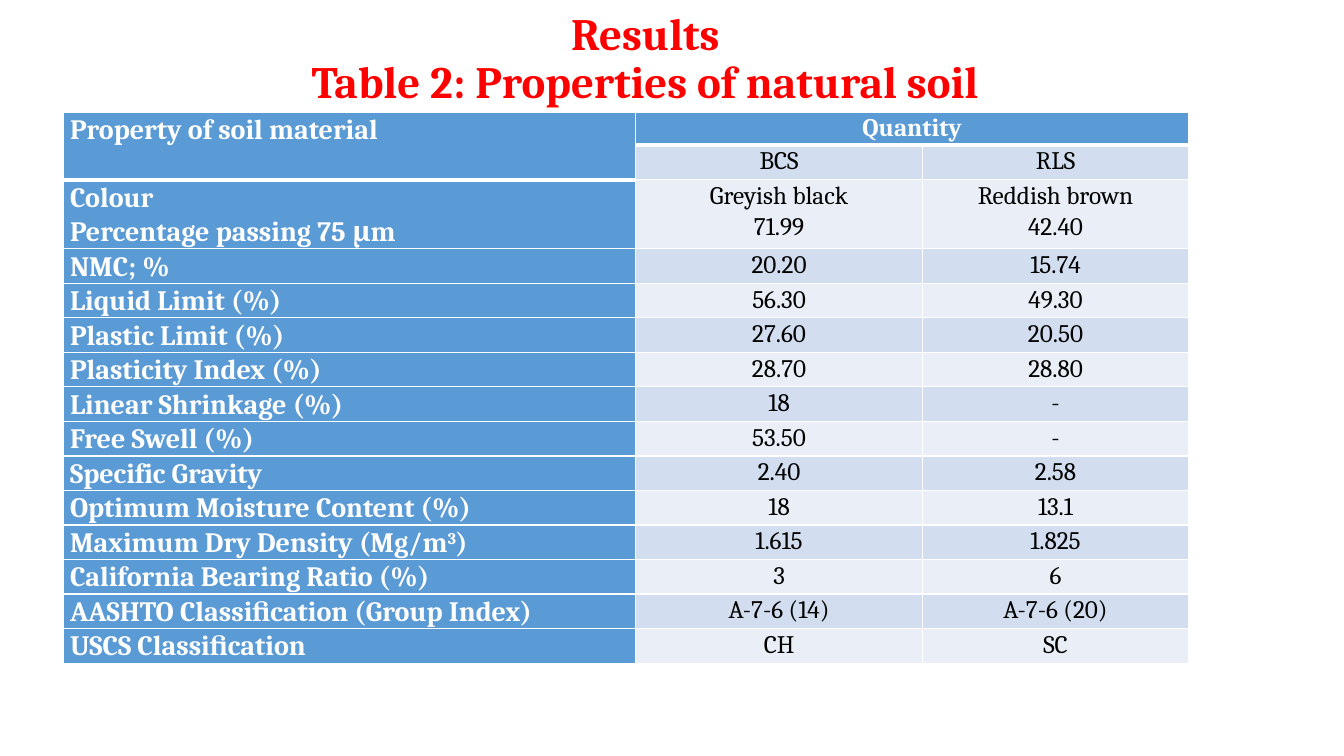
"""Build a slide with a table of natural soil properties."""
import pptx
import pptx.dml.color
import pptx.enum.text
import pptx.oxml
import pptx.oxml.ns
import pptx.util

Pt = pptx.util.Pt
ALIGN = pptx.enum.text.PP_ALIGN
ANCHOR = pptx.enum.text.MSO_ANCHOR
HUES = {"title": "FF0000", "head": "5B9BD5", "dark": "D2DEEF",
        "light": "EAEFF7", "white": "FFFFFF", "black": "000000"}
WIDTHS = (409, 205, 190)
ROW = 23.76
ROWS = (
    ("Property of soil material", "Quantity", ""),
    ("", "BCS", "RLS"),
    ("Colour\nPercentage passing 75 μm", "Greyish black\n71.99", "Reddish brown\n42.40"),
    ("NMC; %", "20.20", "15.74"),
    ("Liquid Limit (%)", "56.30", "49.30"),
    ("Plastic Limit (%)", "27.60", "20.50"),
    ("Plasticity Index (%)", "28.70", "28.80"),
    ("Linear Shrinkage (%)", "18", "-"),
    ("Free Swell (%)", "53.50", "-"),
    ("Specific Gravity", "2.40", "2.58"),
    ("Optimum Moisture Content (%)", "18", "13.1"),
    ("Maximum Dry Density (Mg/m^3^)", "1.615", "1.825"),
    ("California Bearing Ratio (%)", "3", "6"),
    ("AASHTO Classiﬁcation (Group Index)", "A-7-6 (14)", "A-7-6 (20)"),
    ("USCS Classiﬁcation", "CH", "SC"),
)


def tint(name):
    """Return the named colour."""
    return pptx.dml.color.RGBColor.from_string(HUES[name])


def write(frame, text, size=18, hue="black", bold=False, align=ALIGN.CENTER,
          lead=1.07, font="Cambria"):
    """Fill a frame: newline parts paragraphs, \\v parts lines, ^ wraps superscript."""
    for n, line in enumerate(text.split("\n")):
        para = frame.add_paragraph() if n else frame.paragraphs[0]
        para.alignment, para.line_spacing = align, lead
        para.space_before = para.space_after = Pt(0)
        for k, part in enumerate(line.split("\v")):
            if k:
                para.add_line_break()
            for i, piece in enumerate(part.split("^")):
                run = para.add_run()
                run.text = piece
                run.font.name, run.font.size, run.font.bold = font, Pt(size), bold
                run.font.color.rgb = tint(hue)
                if i % 2:
                    run.font._element.set("baseline", "30000")


class Deck:
    """Hold the style and the current slide."""

    def __init__(self, wide, high):
        """Open a deck with one title-only slide."""
        self.file = pptx.Presentation()
        self.file.slide_width, self.file.slide_height = Pt(wide), Pt(high)
        self.slide = self.file.slides.add_slide(self.file.slide_layouts[5])

    def title(self, text, x, y, w, h):
        """Place and format the title."""
        box = self.slide.shapes.title
        box.left, box.top, box.width, box.height = Pt(x), Pt(y), Pt(w), Pt(h)
        frame = box.text_frame
        frame.word_wrap, frame.vertical_anchor = True, ANCHOR.MIDDLE
        frame.auto_size = pptx.enum.text.MSO_AUTO_SIZE.NONE
        write(frame, text, size=32, hue="title", bold=True, lead=0.9)

    def edge(self, cell, top, base):
        """Draw white cell borders with the given top and bottom widths."""
        for side, width in (("L", 1), ("R", 1), ("T", top), ("B", base)):
            cell._tc.get_or_add_tcPr().append(pptx.oxml.parse_xml(
                f'<a:ln{side} {pptx.oxml.ns.nsdecls("a")} w="{Pt(width)}"><a:solidFill>'
                f'<a:srgbClr val="{HUES["white"]}"/></a:solidFill></a:ln{side}>'))

    def cell(self, cell, text, fill, top=1, base=1, **form):
        """Format one table cell."""
        cell.margin_left = cell.margin_right = Pt(5)
        cell.margin_top = cell.margin_bottom = Pt(0)
        self.edge(cell, top, base)
        cell.fill.solid()
        cell.fill.fore_color.rgb = tint(fill)
        write(cell.text_frame, text, **form)

    def table(self, rows, x, y):
        """Add the table with its merged heads and banded rows."""
        highs = [ROW * (1 + row[0].count("\n")) for row in rows]
        grid = self.slide.shapes.add_table(
            len(rows), len(WIDTHS), Pt(x), Pt(y), Pt(sum(WIDTHS)), Pt(sum(highs))).table
        for col, width in zip(grid.columns, WIDTHS):
            col.width = Pt(width)
        grid.cell(0, 0).merge(grid.cell(1, 0))
        grid.cell(0, 1).merge(grid.cell(0, 2))
        for r, row in enumerate(rows):
            grid.rows[r].height = Pt(highs[r])
            for c, text in enumerate(row):
                last = 0 if c else 1
                head = c == 0 or r == 0
                form = {"hue": "white", "bold": True} if head else {}
                if c == 0:
                    form.update(size=20, align=ALIGN.JUSTIFY)
                band = "dark" if r % 2 else "light"
                self.cell(grid.cell(r, c), text, "head" if head else band,
                          top=3 if r == last + 1 else 1,
                          base=3 if r in (0, last) else 1, **form)


def main():
    """Build and save the deck."""
    deck = Deck(960, 540)
    deck.title("Results\vTable 2: Properties of natural soil", 27.5, 20, 867, 46)
    deck.table(ROWS, 45, 80)
    deck.file.save("out.pptx")


if __name__ == "__main__":
    main()
